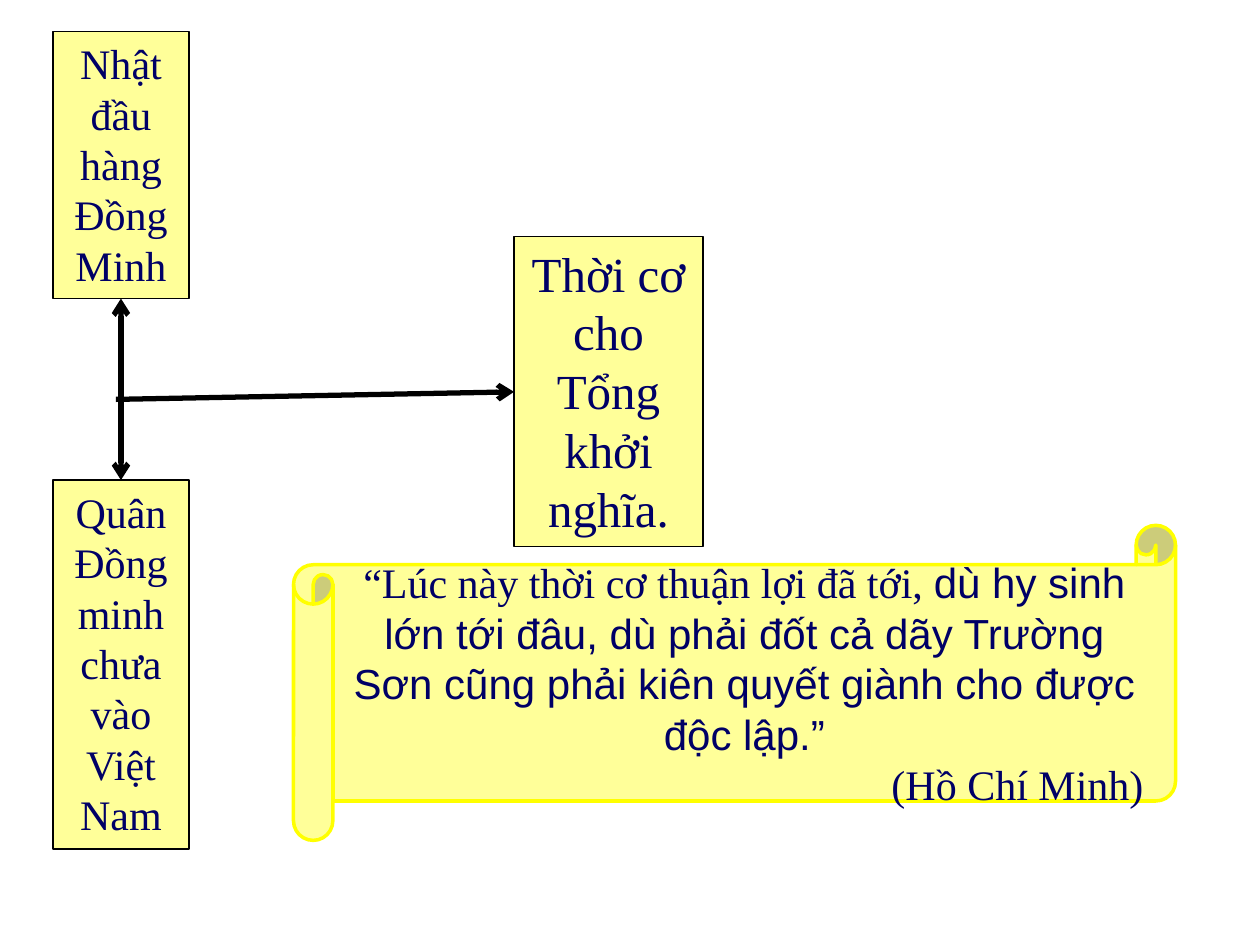
"""Builds the slide on the moment for the general uprising."""
from dataclasses import dataclass

from lxml import etree
from pptx import Presentation
from pptx.dml.color import RGBColor
from pptx.enum.shapes import MSO_CONNECTOR, MSO_SHAPE
from pptx.enum.text import MSO_ANCHOR, MSO_AUTO_SIZE, PP_ALIGN
from pptx.oxml.ns import qn
from pptx.util import Inches, Pt

RECT, SCROLL = MSO_SHAPE.RECTANGLE, MSO_SHAPE.HORIZONTAL_SCROLL
STRAIGHT = MSO_CONNECTOR.STRAIGHT
TOP, MIDDLE = MSO_ANCHOR.TOP, MSO_ANCHOR.MIDDLE
CENTER, RIGHT = PP_ALIGN.CENTER, PP_ALIGN.RIGHT
GROW = MSO_AUTO_SIZE.SHAPE_TO_FIT_TEXT


@dataclass(frozen=True)
class Theme:
    fill: RGBColor = RGBColor(0xFF, 0xFF, 0x99)
    edge: RGBColor = RGBColor(0xFF, 0xFF, 0x00)
    line: RGBColor = RGBColor(0x00, 0x00, 0x00)
    text: RGBColor = RGBColor(0x00, 0x00, 0x66)
    serif: str = "Times New Roman"
    sans: str = "Arial"
    body: Pt = Pt(24)
    result: Pt = Pt(28)


theme = Theme()


def add_panel(kind, box, edge, width, anchor, size, paragraphs):
    sp = s.shapes.add_shape(kind, *map(Inches, box))
    sp.shadow.inherit = False
    sp.fill.solid()
    sp.fill.fore_color.rgb = theme.fill
    sp.line.color.rgb = edge
    sp.line.width = Pt(width)
    tf = sp.text_frame
    tf.word_wrap = True
    tf.vertical_anchor = anchor
    for i, (align, runs) in enumerate(paragraphs):
        p = tf.add_paragraph() if i else tf.paragraphs[0]
        p.alignment = align
        p.font.size = size
        p.font.color.rgb = theme.text
        p.font.name = theme.serif
        for text, font in runs:
            r = p.add_run()
            r.text = text
            if font != theme.serif:
                r.font.name = font
    return sp


def add_arrow(start, end, ends):
    c = s.shapes.add_connector(STRAIGHT, *map(Inches, start + end))
    c.line.color.rgb = theme.line
    c.line.width = Pt(3)
    ln = c.line._get_or_add_ln()
    for tag in ends:
        etree.SubElement(ln, qn(tag), type="arrow")
    etree.SubElement(c._element.spPr, qn("a:effectLst"))
    return c


prs = Presentation()
prs.slide_width, prs.slide_height = Inches(10), Inches(7.5)
s = prs.slides.add_slide(prs.slide_layouts[6])

add_panel(SCROLL, (2.33, 4.17, 7, 2.5), theme.edge, 2, MIDDLE, theme.body, [
    (CENTER, [
        ("“Lúc này thời cơ thuận lợi đã tới, ", theme.serif),
        ("dù hy sinh lớn tới đâu, dù phải đốt cả dãy Trường Sơn "
         "cũng phải kiên quyết giành cho được độc lập.”", theme.sans),
    ]),
    (RIGHT, [("(Hồ Chí Minh)", theme.serif)]),
])

boxes = []
for box, size, text in [
    ((0.42, 0.25, 1.08, 2.12), theme.body, "Nhật đầu hàng Đồng Minh"),
    ((0.42, 3.81, 1.08, 2.93), theme.body, "Quân Đồng minh chưa vào Việt Nam"),
    ((4.08, 1.88, 1.5, 2.46), theme.result, "Thời cơ cho Tổng khởi nghĩa."),
]:
    sp = add_panel(RECT, box, theme.line, 0.75, TOP, size,
                   [(CENTER, [(text, theme.serif)])])
    sp.text_frame.auto_size = GROW
    boxes.append(sp)
surrender, allies, chance = boxes

link = add_arrow((0.96, 2.37), (0.96, 3.81), ("a:headEnd", "a:tailEnd"))
link.begin_connect(surrender, 2)
link.end_connect(allies, 0)
outcome = add_arrow((0.92, 3.17), (4.08, 3.17), ("a:tailEnd",))
outcome.end_connect(chance, 1)

prs.save("out.pptx")
